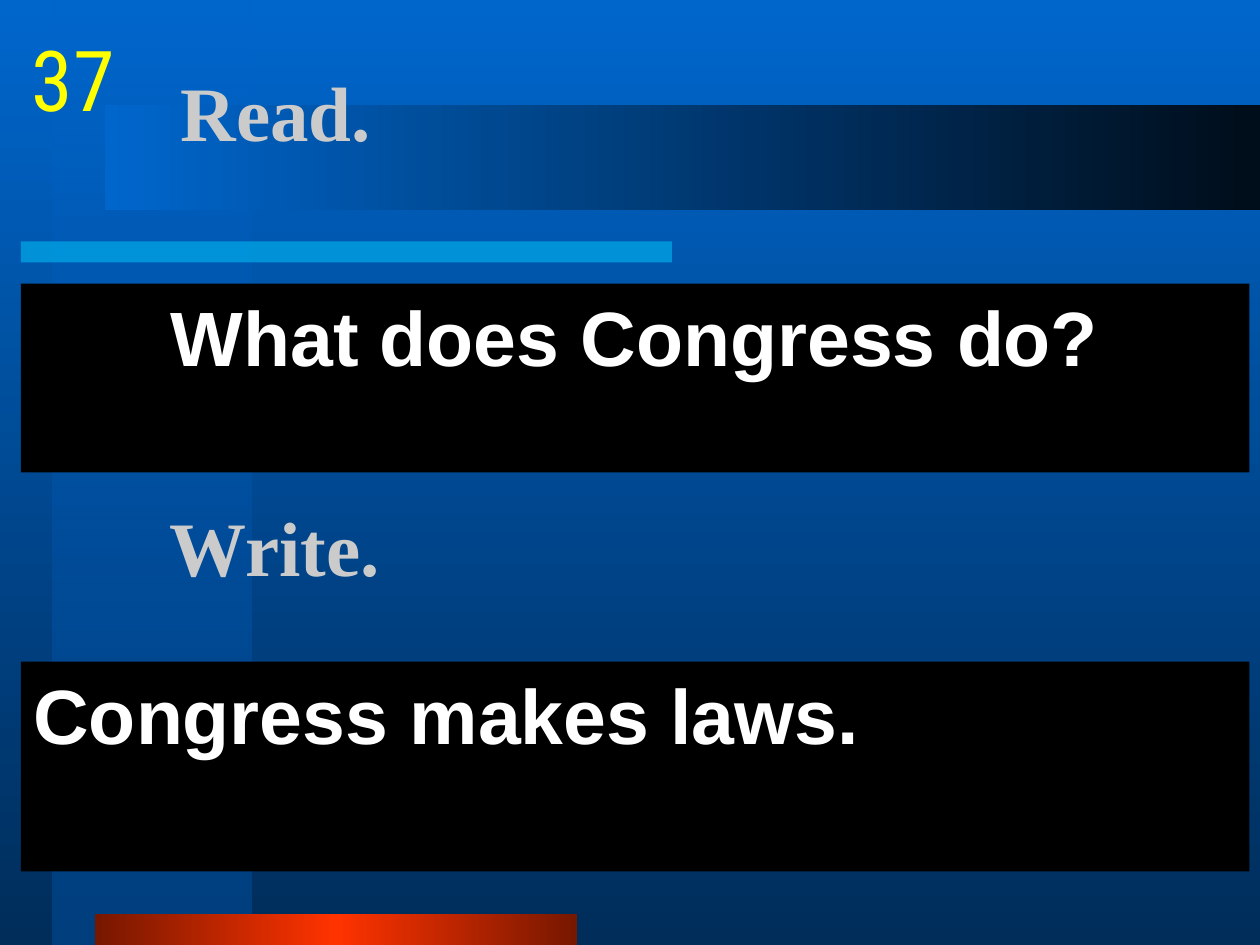
from lxml.etree import SubElement
from pptx import Presentation
from pptx.dml.color import RGBColor
from pptx.enum.shapes import MSO_SHAPE as Shape
from pptx.enum.text import MSO_ANCHOR as Anchor, MSO_AUTO_SIZE as AutoSize, PP_ALIGN as Align
from pptx.oxml.ns import qn
from pptx.util import Pt

COLORS = {
    "blue": "0066CC", "navy": "002D5A", "strip": "003F7E", "night": "000D1A",
    "cyan": "00CCFF", "red": "FF3300", "maroon": "761700",
    "black": "000000", "white": "FFFFFF", "silver": "CBCBCB", "yellow": "FFFF00",
}


def set_gradient(fill, owner, stops, angle):
    """Fill with (position %, colour name, opacity %) stops, angle counter-clockwise."""
    fill.gradient()
    fill.gradient_angle = angle
    stop_list = owner.find(".//" + qn("a:gsLst"))
    for old_stop in list(stop_list):
        stop_list.remove(old_stop)
    for position, color, opacity in stops:
        stop = SubElement(stop_list, qn("a:gs"), pos=str(position * 1000))
        rgb = SubElement(stop, qn("a:srgbClr"), val=COLORS[color])
        SubElement(rgb, qn("a:alpha"), val=str(opacity * 1000))


def write_text(box, text, font, size, color, bold, align, anchor):
    frame = box.text_frame
    frame.auto_size = AutoSize.NONE
    frame.word_wrap = True
    frame.vertical_anchor = anchor
    para = frame.paragraphs[0]
    para.alignment = align
    span = para.add_run()
    span.text = text
    for name, value in {"name": font, "size": Pt(size), "bold": bold}.items():
        setattr(span.font, name, value)
    span.font.color.rgb = RGBColor.from_string(COLORS[color])
    return para


deck = Presentation()
deck.slide_width, deck.slide_height = Pt(720), Pt(540)
page = deck.slides.add_slide(deck.slide_layouts[1])
shapes = page.shapes
title, question = page.placeholders

# Background and decorative bars
set_gradient(page.background.fill, page.element, [(0, "blue", 100), (100, "navy", 100)], 270)
bars = [
    ((30, 0, 114, 540), [(0, "blue", 50), (100, "strip", 100)], 270),
    ((12, 138, 372, 12), [(0, "cyan", 50), (100, "cyan", 50)], 0),
    ((54, 522, 276, 18), [(0, "maroon", 100), (50, "red", 100), (100, "maroon", 100)], 0),
    ((60, 60, 660, 60), [(0, "blue", 100), (100, "night", 100)], 0),
]
for place, stops, angle in bars:
    bar = shapes.add_shape(Shape.RECTANGLE, *map(Pt, place))
    bar.shadow.inherit = False
    bar.line.fill.background()
    set_gradient(bar.fill, bar.element, stops, angle)

# Placeholders go in front of the bars
for holder, place in [(title, (96, 18, 612, 90)), (question, (12, 162, 702, 108))]:
    holder.left, holder.top, holder.width, holder.height = map(Pt, place)
    shapes.element.append(holder.element)

# Headings
write_label = shapes.add_textbox(Pt(90), Pt(252), Pt(612), Pt(120))
for heading, text in [(title, "Read."), (write_label, "Write.")]:
    write_text(heading, text, "Times New Roman", 44, "silver", True, Align.LEFT, Anchor.MIDDLE)

# Question and answer panels
answer = shapes.add_textbox(Pt(12), Pt(378), Pt(702), Pt(120))
panels = [
    (question, "What does Congress do?", Align.CENTER),
    (answer, "Congress makes laws.", Align.LEFT),
]
for panel, text, align in panels:
    panel.fill.solid()
    panel.fill.fore_color.rgb = RGBColor.from_string(COLORS["black"])
    para = write_text(panel, text, "Arial", 44, "white", True, align, Anchor.TOP)
    para.space_before = Pt(9)
    props = para._p.get_or_add_pPr()
    props.set("marL", str(Pt(27)))
    props.set("indent", str(-Pt(27)))
    SubElement(props, qn("a:buNone"))

# Question number
number = shapes.add_textbox(Pt(12), Pt(12), Pt(60), Pt(60))
write_text(number, "37", "Roboto Condensed", 48, "yellow", False, Align.CENTER, Anchor.TOP)
number.text_frame.word_wrap = False

deck.save("out.pptx")
